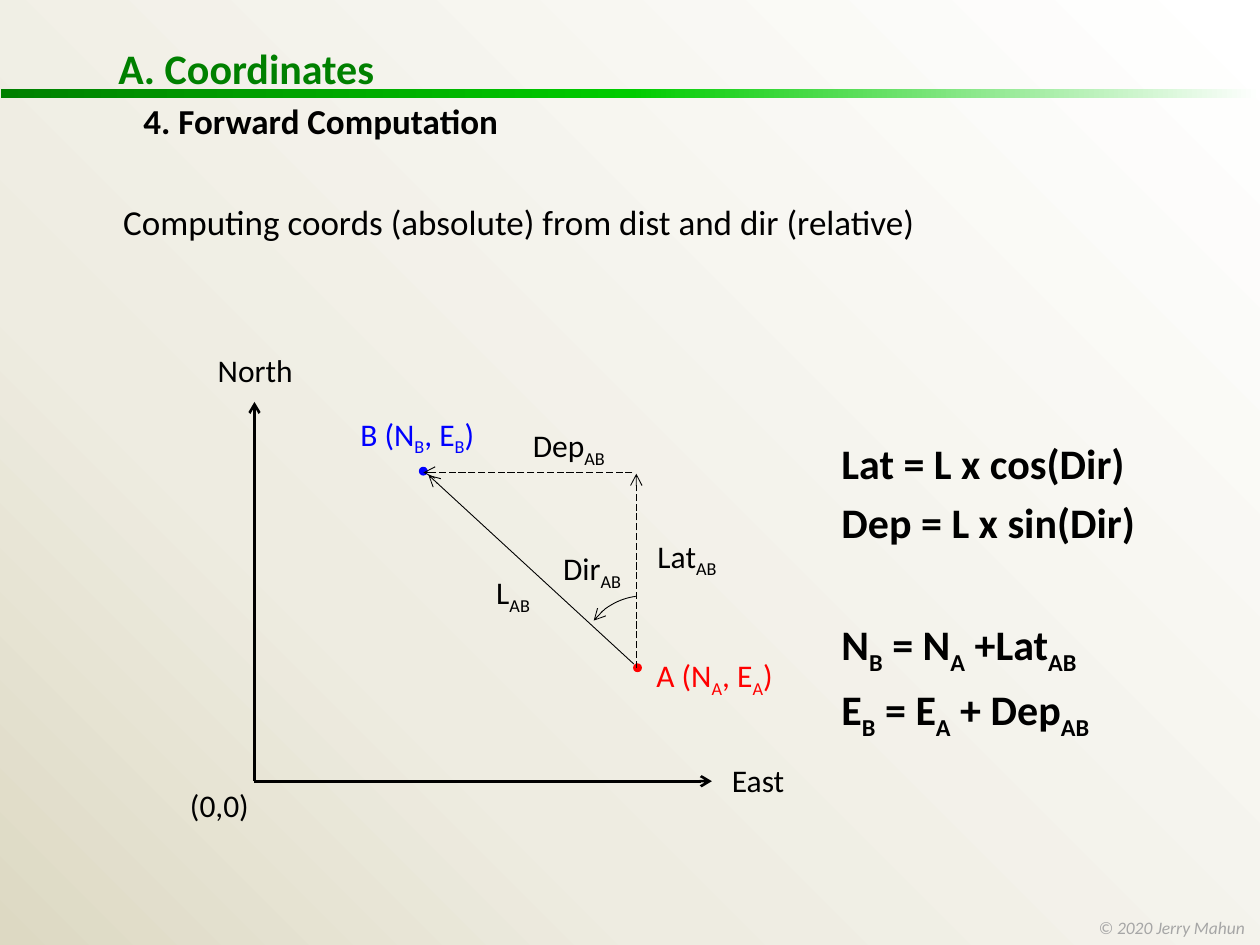
from pptx import Presentation
from pptx.dml.color import RGBColor
from pptx.enum.dml import MSO_LINE
from pptx.enum.shapes import MSO_CONNECTOR, MSO_SHAPE
from pptx.enum.text import MSO_AUTO_SIZE as AUTO
from pptx.oxml.ns import qn
from pptx.util import Inches, Pt
from lxml.etree import SubElement

COLORS = {
    "black": "000000", "title": "008000", "bright": "00CC00",
    "red": "FF0000", "blue": "0000FF", "credit": "A6A6A6",
    "white": "FFFFFF", "cream": "EEECE1", "sand": "DDD9C3",
}


def rgb(name):
    return RGBColor.from_string(COLORS[name])


def write(paragraph, text, font="Calibri", size=18, color="black", bold=False,
          italic=False, before=0, spacing=None, indent=0):
    """Fill a paragraph; pieces between bars are subscripts."""
    paragraph.space_before = Pt(before)
    if spacing:
        paragraph.line_spacing = spacing
    if indent:
        paragraph._p.get_or_add_pPr().set("marL", str(Inches(indent)))
    for index, piece in enumerate(text.split("|")):
        if not piece:
            continue
        run = paragraph.add_run()
        run.text = piece
        run.font.name, run.font.size = font, Pt(size)
        run.font.bold, run.font.italic = bold, italic
        run.font.color.rgb = rgb(color)
        if index % 2:
            run.font._element.set("baseline", "-25000")


class SlideBuilder:
    def __init__(self, slide):
        self.slide = slide
        self.shapes = slide.shapes

    def gradient(self, owner, element, stops, angle):
        owner.fill.gradient()
        owner.fill.gradient_angle = (360 - angle) % 360
        stop_list = next(element.iter(qn("a:gsLst")))
        for old in list(stop_list):
            stop_list.remove(old)
        for percent, color in stops:
            stop = SubElement(stop_list, qn("a:gs"), pos=str(percent * 1000))
            SubElement(stop, qn("a:srgbClr"), val=COLORS[color])

    def arrow_end(self, shape, end):
        SubElement(shape.line._get_or_add_ln(), qn(f"a:{end}"), type="arrow")

    def text(self, box, *lines, wrap=True, inset=None, **style):
        """Each line is a string or a (string, own format) pair."""
        frame = self.shapes.add_textbox(*map(Inches, box)).text_frame
        frame.word_wrap = wrap
        frame.auto_size = AUTO.NONE if wrap else AUTO.SHAPE_TO_FIT_TEXT
        if inset is not None:
            frame.margin_left = frame.margin_right = Inches(inset)
            frame.margin_top = frame.margin_bottom = Inches(inset)
        for index, line in enumerate(lines):
            words, own = line if isinstance(line, tuple) else (line, {})
            paragraph = frame.add_paragraph() if index else frame.paragraphs[0]
            write(paragraph, words, **{**style, **own})

    def label(self, box, words, **style):
        self.text(box, words, wrap=False, **style)

    def bar(self, box, stops):
        bar = self.shapes.add_shape(MSO_SHAPE.RECTANGLE, *map(Inches, box))
        bar.shadow.inherit = False
        bar.line.fill.background()
        self.gradient(bar, bar._element, stops, 0)

    def point(self, x, y, color, size=0.06):
        corner = (x - size / 2, y - size / 2, size, size)
        dot = self.shapes.add_shape(MSO_SHAPE.OVAL, *map(Inches, corner))
        dot.shadow.inherit = False
        dot.fill.solid()
        dot.fill.fore_color.rgb = rgb(color)
        dot.line.color.rgb = rgb(color)
        dot.line.width = Pt(0.75)

    def arrow(self, start, end, width=0.5, dashed=False):
        arrow = self.shapes.add_connector(
            MSO_CONNECTOR.STRAIGHT, *map(Inches, start + end))
        arrow.line.color.rgb = rgb("black")
        arrow.line.width = Pt(width)
        if dashed:
            arrow.line.dash_style = MSO_LINE.LONG_DASH
        self.arrow_end(arrow, "tailEnd")
        SubElement(arrow._element.spPr, qn("a:effectLst"))

    def arc(self, box, start, end):
        arc = self.shapes.add_shape(MSO_SHAPE.ARC, *map(Inches, box))
        # Adjustments hold 60000ths of a degree, scaled down by 100000
        arc.adjustments[0], arc.adjustments[1] = start * 0.6, end * 0.6
        arc.fill.background()
        arc.line.color.rgb = rgb("black")
        arc.line.width = Pt(0.5)
        self.arrow_end(arc, "headEnd")
        arc.shadow.inherit = False


def main():
    deck = Presentation()
    deck.slide_width, deck.slide_height = Inches(10), Inches(7.5)
    slide = deck.slides.add_slide(deck.slide_layouts[6])
    page = SlideBuilder(slide)

    # Background, footer and title rule
    page.gradient(slide.background, slide._element,
                  [(0, "white"), (70, "cream"), (100, "sand")], 135)
    page.label((8.62, 7.23, 1.38, 0.27), "© 2020 Jerry Mahun",
               size=10, color="credit", italic=True)
    page.bar((0.01, 0.71, 10, 0.07),
             [(0, "title"), (50, "bright"), (100, "white")])

    # Headings and introduction
    page.text((0.88, 1.58, 8.93, 0.5),
              "Computing coords (absolute) from dist and dir (relative)",
              size=20, spacing=0.9, before=11.2)
    page.text((0.84, 0.29, 4.81, 1.18),
              ("A. Coordinates", dict(size=24, color="title", before=7.5)),
              ("4. Forward Computation", dict(indent=0.2, before=3.8)),
              size=20, bold=True)

    # Formulas, with a wider gap between the two pairs
    page.text((6.58, 3.47, 3.42, 2.6),
              "Lat = L x cos(Dir)",
              "Dep = L x sin(Dir)",
              ("N|B| = N|A| +Lat|AB|", dict(before=41.4)),
              "E|B| = E|A| + Dep|AB|",
              size=24, bold=True, spacing=0.9, before=7.5)

    # Axes
    origin = (2.02, 6.2)
    page.arrow(origin, (2.02, 3.19), width=1.5)
    page.arrow(origin, (5.65, 6.2), width=1.5)
    page.label((1.63, 2.74, 0.87, 0.4), "North")
    page.label((5.71, 5.99, 0.69, 0.4), "East")
    page.label((1.41, 6.19, 0.74, 0.4), "(0,0)")

    # End points
    page.point(5.06, 5.3, "red")
    page.label((5.21, 5.21, 1.16, 0.3), "A (N|A|, E|A|)", color="red", inset=0)
    page.point(3.36, 3.74, "blue")
    page.label((2.86, 3.29, 0.92, 0.3), "B (N|B|, E|B|)", color="blue", inset=0)

    # Line AB with its departure, latitude and direction
    page.arrow((5.03, 5.27), (3.4, 3.77))
    page.arrow((5.02, 3.75), (3.36, 3.75), dashed=True)
    page.arrow((5.05, 5.3), (5.05, 3.76), dashed=True)
    page.arc((4.61, 4.73, 1, 1), 217.44, 262.67)
    page.label((5.12, 4.21, 0.8, 0.4), "Lat|AB|")
    page.label((4.13, 3.33, 0.95, 0.4), "Dep|AB|")
    page.label((3.84, 4.5, 0.5, 0.4), "L|AB|")
    page.label((4.37, 4.31, 0.69, 0.4), "Dir|AB|")

    deck.save("out.pptx")


if __name__ == "__main__":
    main()
